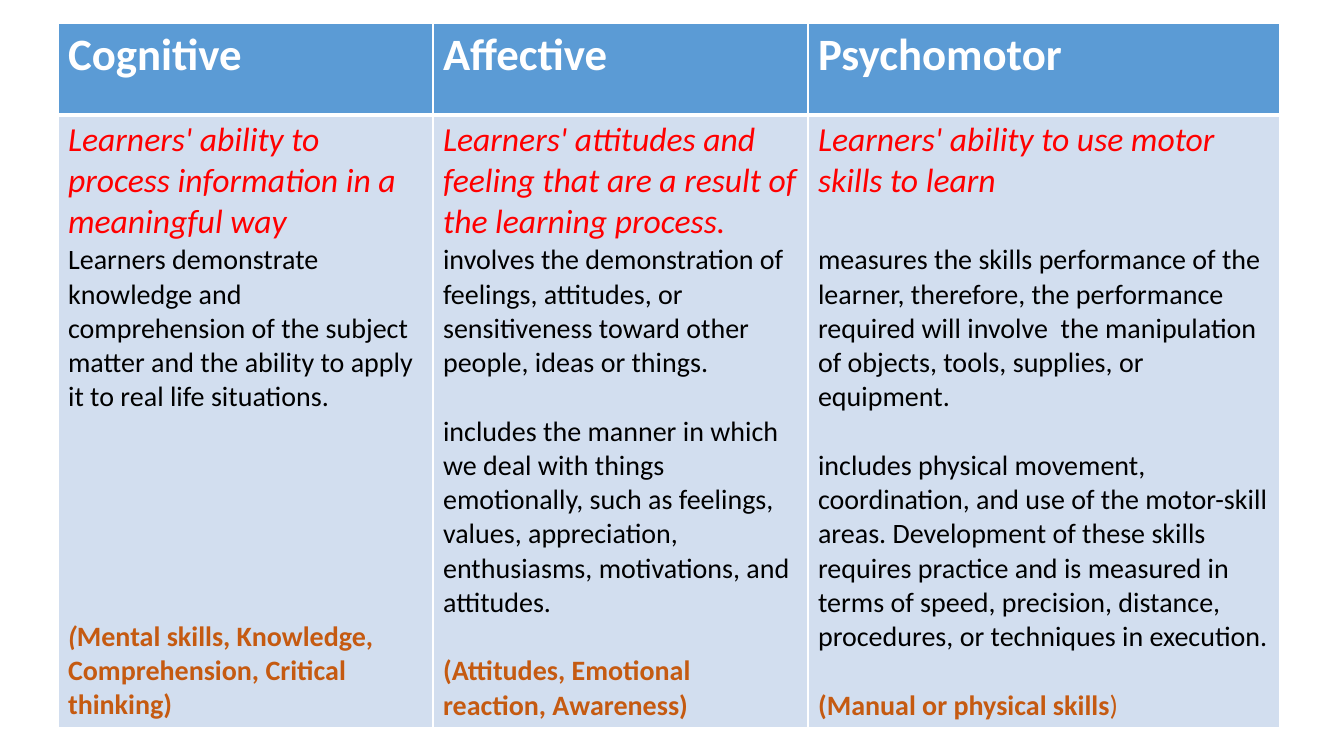
from lxml.etree import SubElement
from pptx import Presentation
from pptx.dml.color import RGBColor
from pptx.oxml.ns import qn
from pptx.util import Pt

PX = 914400 / 100.8
WHITE = RGBColor(0xFF, 0xFF, 0xFF)
BLACK = RGBColor(0x00, 0x00, 0x00)
BLUE = RGBColor(0x5B, 0x9B, 0xD5)
PALE = RGBColor(0xD2, 0xDE, 0xEF)
RED = RGBColor(0xFF, 0x00, 0x00)
RUST = RGBColor(0xC5, 0x5A, 0x11)
LINE = 24.4


def px(n):
    return round(n * PX)


def add_run(para, text, size, color, bold=False, slant=False):
    run = para.add_run()
    run.text = text
    font = run.font
    font.name = "Calibri"
    font.size = Pt(size)
    font.color.rgb = color
    font.bold = bold
    font.italic = slant


HEAD = (32, WHITE, True)
GOAL = (24, RED, False, True)
BODY = (20, BLACK)
SKILL = (20, RUST, True)

heads = ["Cognitive", "Affective", "Psychomotor"]
texts = [
    [
        (0, [("Learners' ability to process information in a meaningful way", GOAL)]),
        (0, [("Learners demonstrate knowledge and comprehension of the subject matter "
              "and the ability to apply it to real life situations.", BODY)]),
        (6 * LINE, [("(", (20, RUST, True, True)),
                    ("Mental skills, Knowledge, Comprehension, Critical thinking)", SKILL)]),
    ],
    [
        (0, [("Learners' attitudes and feeling that are a result of the learning process.", GOAL)]),
        (0, [("involves the demonstration of feelings, attitudes, or sensitiveness "
              "toward other people, ideas or things.", BODY)]),
        (LINE, [("includes the manner in which we deal with things emotionally, such as "
                 "feelings, values, appreciation, enthusiasms, motivations, and attitudes.", BODY)]),
        (LINE, [("(Attitudes, Emotional reaction, Awareness)", SKILL)]),
    ],
    [
        (0, [("Learners' ability to use motor skills to learn", GOAL)]),
        (1.2 * LINE, [("measures the skills performance of the learner, therefore, the "
                       "performance required will involve  the manipulation of objects, "
                       "tools, supplies, or equipment.", BODY)]),
        (LINE, [("includes physical movement, coordination, and use of the motor-skill "
                 "areas. Development of these skills requires practice and is measured in "
                 "terms of speed, precision, distance, procedures, or techniques in "
                 "execution.", BODY)]),
        (LINE, [("(Manual or physical skills", SKILL), (")", (20, RUST))]),
    ],
]
rows = [[[(0, [(head, HEAD)])] for head in heads], texts]
fills = [BLUE, PALE]
edges = [
    {"lnL": 1, "lnR": 1, "lnT": 1, "lnB": 3},
    {"lnL": 1, "lnR": 1, "lnT": 3, "lnB": 1},
]
wides = [375, 375, 472]
talls = [92, 611]

deck = Presentation()
deck.slide_width = px(1344)
deck.slide_height = px(756)
slide = deck.slides.add_slide(deck.slide_layouts[6])

frame = slide.shapes.add_table(2, 3, px(58), px(23), px(sum(wides)), px(sum(talls)))
table = frame.table
table.horz_banding = False
for col, wide in zip(table.columns, wides):
    col.width = px(wide)
for row, tall in zip(table.rows, talls):
    row.height = px(tall)

for r, row in enumerate(rows):
    for c, paras in enumerate(row):
        cell = table.cell(r, c)
        props = cell._tc.get_or_add_tcPr()
        for side, width in edges[r].items():
            edge = SubElement(props, qn("a:" + side), w=str(Pt(width)))
            solid = SubElement(edge, qn("a:solidFill"))
            SubElement(solid, qn("a:srgbClr"), val=str(WHITE))
        cell.fill.solid()
        cell.fill.fore_color.rgb = fills[r]
        for n, (gap, runs) in enumerate(paras):
            body = cell.text_frame
            para = body.add_paragraph() if n else body.paragraphs[0]
            if gap:
                para.space_before = Pt(gap)
            for text, style in runs:
                add_run(para, text, *style)

deck.save("out.pptx")
